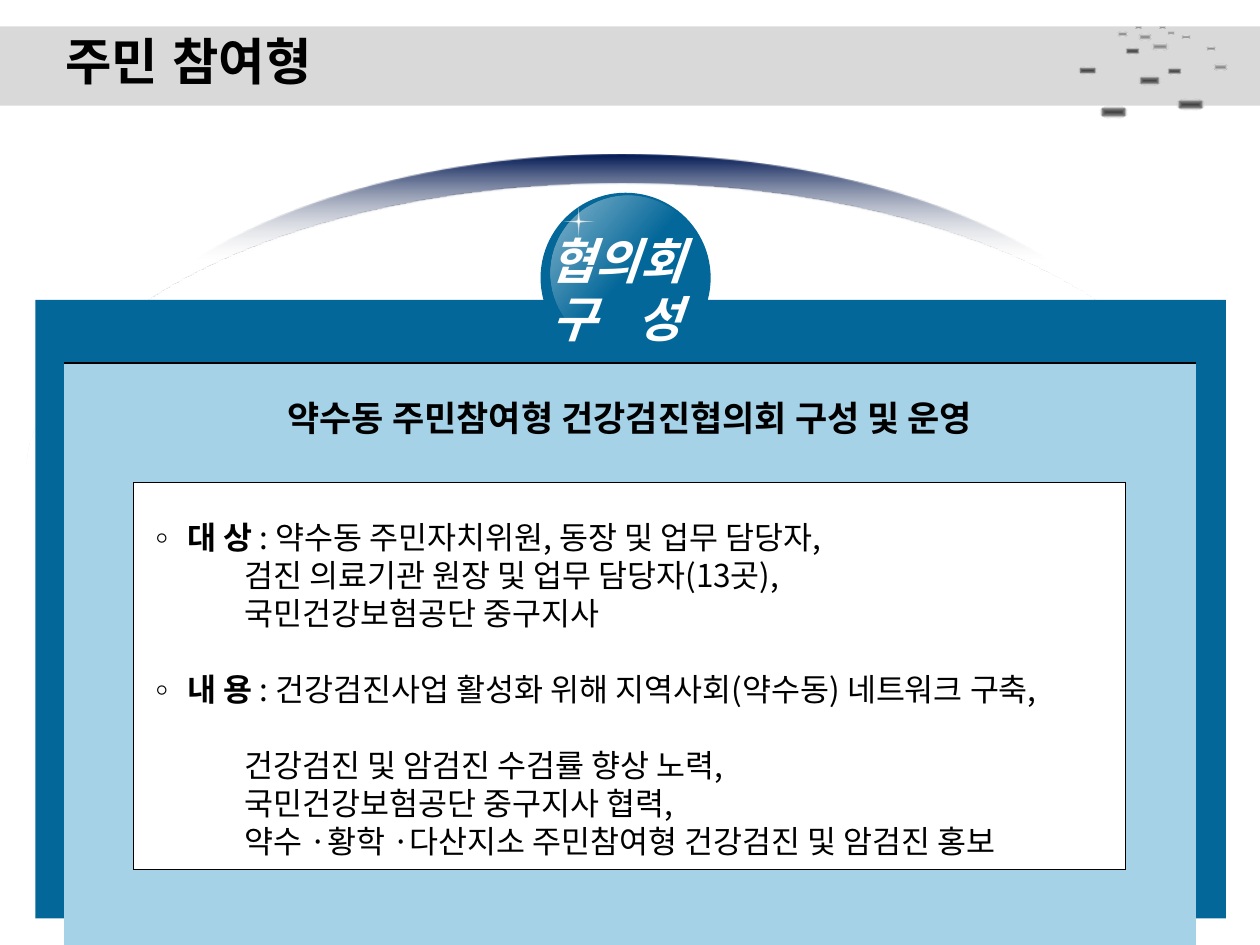
from typing import NamedTuple

from lxml.etree import SubElement
from pptx import Presentation
from pptx.dml.color import RGBColor
from pptx.enum.shapes import MSO_SHAPE as Geom
from pptx.enum.text import MSO_ANCHOR as Anchor, MSO_AUTO_SIZE as Auto, PP_ALIGN as Align
from pptx.oxml.ns import qn
from pptx.util import Inches, Pt

WHITE = RGBColor(0xFF, 0xFF, 0xFF)
BLACK = RGBColor(0x00, 0x00, 0x00)
BAND = RGBColor(0xD9, 0xD9, 0xD9)
DARK = RGBColor(0x40, 0x40, 0x40)
GRAY = RGBColor(0x80, 0x80, 0x80)
PALE = RGBColor(0xBF, 0xBF, 0xBF)
NAVY = RGBColor(0x00, 0x17, 0x53)
BLUE = RGBColor(0x03, 0x67, 0x99)
SKY = RGBColor(0xA5, 0xD2, 0xE7)
NOTO = "Noto Sans CJK KR"


class Box(NamedTuple):
    x: float
    y: float
    w: float
    h: float


class Stop(NamedTuple):
    pos: int
    color: RGBColor
    alpha: int = 100


class Line(NamedTuple):
    text: str
    head: str = ""
    gap: float = 0


def place(box: Box) -> list:
    return [Inches(v) for v in box]


def draw(kind: Geom, box: Box, color: RGBColor = WHITE):
    shape = slide.shapes.add_shape(kind, *place(box))
    shape.shadow.inherit = False
    shape.fill.solid()
    shape.fill.fore_color.rgb = color
    shape.line.fill.background()
    return shape


def shade(shape, stops: list[Stop], angle: int = 0, path: str = "") -> None:
    """Swap the solid fill for a gradient, linear or along a path."""
    props = shape._element.spPr
    old = props.find(qn("a:solidFill"))
    grad = props.makeelement(qn("a:gradFill"), {"rotWithShape": "1"})
    props.replace(old, grad)
    group = SubElement(grad, qn("a:gsLst"))
    for stop in stops:
        mark = SubElement(group, qn("a:gs"), pos=str(stop.pos * 1000))
        tint = SubElement(mark, qn("a:srgbClr"), val=str(stop.color))
        if stop.alpha < 100:
            SubElement(tint, qn("a:alpha"), val=str(stop.alpha * 1000))
    if path:
        way = SubElement(grad, qn("a:path"), path=path)
        SubElement(way, qn("a:fillToRect"), l="50000", t="50000", r="50000", b="50000")
    else:
        SubElement(grad, qn("a:lin"), ang=str(angle * 60000), scaled="0")


def write(para, text: str, face: str, **look) -> None:
    run = para.add_run()
    run.text = text
    look = {"name": face, "size": Pt(18), "bold": False} | look
    color = look.pop("color", BLACK)
    for key, value in look.items():
        setattr(run.font, key, value)
    run.font.color.rgb = color
    SubElement(run._r.get_or_add_rPr(), qn("a:ea"), typeface=face)


def setup(frame, **look) -> None:
    look = {"word_wrap": True, "auto_size": Auto.NONE} | look
    for key, value in look.items():
        setattr(frame, key, value)


def panel(box: Box, color: RGBColor, edges: dict[str, float]):
    """A one-cell table; edges gives line widths by side."""
    table = slide.shapes.add_table(1, 1, *place(box)).table
    table.first_row = table.horz_banding = False
    cell = table.cell(0, 0)
    cell.fill.solid()
    cell.fill.fore_color.rgb = color
    props = cell._tc.get_or_add_tcPr()
    for i, side in enumerate("LRTB"):
        width = edges.get(side, 0)
        edge = props.makeelement(qn(f"a:ln{side}"), {"w": str(Pt(width))})
        props.insert(i, edge)
        if width:
            SubElement(SubElement(edge, qn("a:solidFill")), qn("a:srgbClr"), val=str(BLACK))
        else:
            SubElement(edge, qn("a:noFill"))
    return cell


deck = Presentation()
deck.slide_width, deck.slide_height = Inches(10), Inches(7.5)
slide = deck.slides.add_slide(deck.slide_layouts[1])
tree = slide.shapes._spTree
title, body = slide.placeholders


def lift(shape, box: Box) -> None:
    """Bring a placeholder to the front and place it."""
    tree.append(shape._element)
    shape.left, shape.top, shape.width, shape.height = place(box)


# Header band with scattered dots
draw(Geom.RECTANGLE, Box(0, 0.21, 10, 0.63), BAND)
NEAR = [Box(8.56, 0.53, 0.14, 0.06), Box(8.73, 0.84, 0.22, 0.1),
        Box(9.34, 0.78, 0.22, 0.1), Box(9.04, 0.6, 0.17, 0.08),
        Box(8.93, 0.38, 0.11, 0.05), Box(9.27, 0.54, 0.11, 0.05)]
FAR = [Box(9.63, 0.51, 0.11, 0.05), Box(9.58, 0.37, 0.07, 0.03),
       Box(9.38, 0.28, 0.07, 0.03), Box(9.14, 0.34, 0.13, 0.06),
       Box(9.04, 0.27, 0.1, 0.05), Box(8.87, 0.25, 0.08, 0.04),
       Box(9.01, 0.21, 0.05, 0.02), Box(9.27, 0.25, 0.05, 0.02),
       Box(9.2, 0.21, 0.05, 0.02)]
for dots, core, ring in ((NEAR, DARK, GRAY), (FAR, GRAY, PALE)):
    for dot in dots:
        shade(draw(Geom.OVAL, dot), [Stop(0, core), Stop(50, ring), Stop(100, WHITE, 0)],
              path="shape")

# Arc: a shaded ellipse partly hidden by a white one
shade(draw(Geom.OVAL, Box(0.53, 1.23, 8.81, 4.65)),
      [Stop(50, WHITE, 0), Stop(82, BAND, 0), Stop(100, NAVY)], 270)
shade(draw(Geom.OVAL, Box(0.2, 1.46, 9.47, 4.77)),
      [Stop(50, WHITE, 0), Stop(82, WHITE), Stop(100, WHITE)], 270)

# Blue frame and glossy ball
draw(Geom.RECTANGLE, Box(0.28, 2.38, 9.45, 4.91), BLUE)
draw(Geom.OVAL, Box(4.29, 1.53, 1.35, 1.35), BLUE)
star = draw(Geom.STAR_4_POINT, Box(4.43, 1.6, 0.32, 0.32))
star.adjustments[0] = 0.04
shade(star, [Stop(0, WHITE), Stop(66, WHITE, 0), Stop(100, WHITE, 0)], path="circle")
shade(draw(Geom.OVAL, Box(4.37, 1.55, 1.23, 1.23)),
      [Stop(0, WHITE, 0), Stop(50, WHITE, 0), Stop(100, WHITE, 54)], 220)

# Title
lift(title, Box(0.2, 0.21, 9.3, 0.54))
setup(title.text_frame, vertical_anchor=Anchor.MIDDLE, margin_left=Inches(0.32))
para = title.text_frame.paragraphs[0]
para.alignment = Align.LEFT
write(para, "주민 참여형", "Arial", size=Pt(28.8), bold=True)

# Panels
cell = panel(Box(0.51, 2.88, 8.98, 4.62), SKY, {"T": 1.7, "B": 0.25})
cell.vertical_anchor = Anchor.TOP
cell.margin_top = Inches(0.02)
para = cell.text_frame.paragraphs[0]
para.alignment, para.line_spacing = Align.CENTER, 1.5
write(para, "약수동 주민참여형 건강검진협의회 구성 및 운영", NOTO, size=Pt(20), bold=True)
panel(Box(1.06, 3.83, 7.87, 3.07), WHITE, dict.fromkeys("LRTB", 0.28))

# Details
PITCH = 21.7
LINES = [
    Line(": 약수동 주민자치위원, 동장 및 업무 담당자,", "대 상 "),
    Line("검진 의료기관 원장 및 업무 담당자(13곳),"),
    Line("국민건강보험공단 중구지사"),
    Line(": 건강검진사업 활성화 위해 지역사회(약수동) 네트워크 구축,", "내 용 ", PITCH),
    Line("건강검진 및 암검진 수검률 향상 노력,", gap=PITCH),
    Line("국민건강보험공단 중구지사 협력,"),
    Line("약수 ·황학 ·다산지소 주민참여형 건강검진 및 암검진 홍보"),
]
lift(body, Box(1.06, 4.06, 7.87, 2.82))
setup(body.text_frame, vertical_anchor=Anchor.TOP, margin_right=0)
for i, line in enumerate(LINES):
    para = body.text_frame.add_paragraph() if i else body.text_frame.paragraphs[0]
    para.line_spacing, para.space_before = Pt(PITCH), Pt(line.gap)
    props = para._p.get_or_add_pPr()
    left = Inches(0.33 if line.head else 0.78)
    props.set("marL", str(left))
    props.set("indent", str(-left if line.head else 0))
    if line.head:
        SubElement(props, qn("a:buFont"), typeface=NOTO)
        SubElement(props, qn("a:buChar"), char="◦")
        write(para, line.head, NOTO, bold=True)
    else:
        SubElement(props, qn("a:buNone"))
    write(para, line.text, NOTO)

# Ball label
label = slide.shapes.add_textbox(*place(Box(3.36, 1.78, 3.07, 1.04))).text_frame
setup(label)
for i, word in enumerate(("협의회", "구 성")):
    para = label.add_paragraph() if i else label.paragraphs[0]
    para.alignment, para.line_spacing = Align.CENTER, Pt(33.5)
    write(para, word, "Montserrat", size=Pt(28), bold=True, italic=True, color=WHITE)
para.runs[0]._r.rPr.set("spc", "750")

deck.save("out.pptx")
